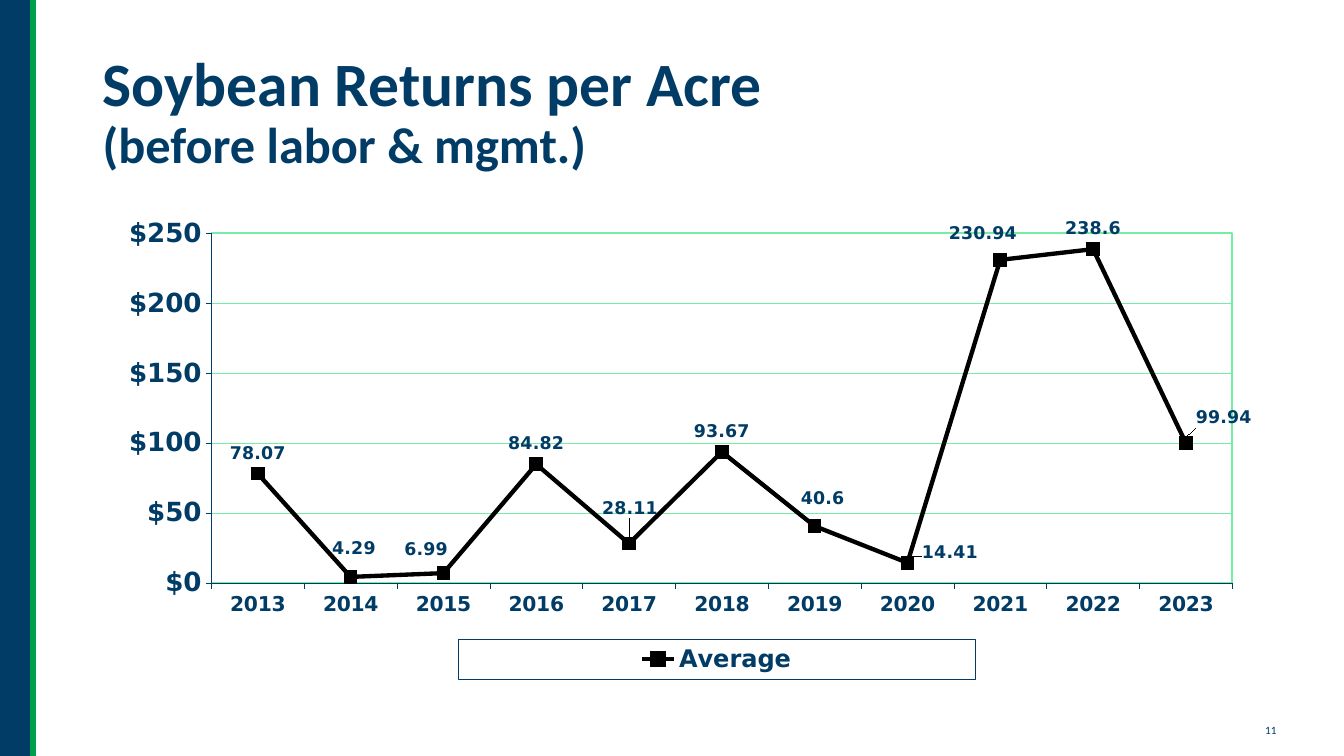
from lxml.etree import SubElement
from pptx import Presentation
from pptx.chart.data import CategoryChartData
from pptx.dml.color import RGBColor
from pptx.enum.chart import (XL_CHART_TYPE, XL_LABEL_POSITION, XL_LEGEND_POSITION,
                             XL_MARKER_STYLE, XL_TICK_MARK)
from pptx.enum.shapes import MSO_CONNECTOR, MSO_SHAPE
from pptx.enum.text import MSO_ANCHOR, PP_ALIGN
from pptx.oxml import parse_xml
from pptx.oxml.ns import nsdecls, qn
from pptx.util import Cm, Pt

COLORS = {"navy": "003C66", "green": "009F4D", "mint": "76EDA4", "black": "000000"}
TEXT_FONT = "Calibri"
CHART_FONT = "DejaVu Sans"
RETURNS = {
    "2013": 78.07, "2014": 4.29, "2015": 6.99, "2016": 84.82, "2017": 28.11, "2018": 93.67,
    "2019": 40.6, "2020": 14.41, "2021": 230.94, "2022": 238.6, "2023": 99.94,
}
LABEL_SHIFTS = {
    "2014": (0.003, -0.017), "2015": (-0.015, -0.006), "2017": (0.001, -0.031),
    "2019": (0.007, -0.015), "2020": (0.037, 0.021), "2021": (-0.015, -0.013),
    "2023": (0.033, -0.01),
}


def color(name):
    """Return the palette colour as an RGBColor."""
    return RGBColor.from_string(COLORS[name])


def style_font(font, size, face, bold=True):
    """Set size, face, weight and the navy text colour."""
    font.size = Pt(size)
    font.name = face
    font.bold = bold
    font.color.rgb = color("navy")


def style_line(line, name, width):
    """Give a line its colour and width."""
    line.color.rgb = color(name)
    line.width = Pt(width)


def place(predecessor, **values):
    """Insert a manual chart layout right after the given element."""
    parent = predecessor.getparent()
    for old in parent.findall(qn("c:layout")):
        parent.remove(old)
    layout = parse_xml(f"<c:layout {nsdecls('c')}><c:manualLayout/></c:layout>")
    for tag, value in values.items():
        SubElement(layout[0], qn(f"c:{tag}")).set("val", str(value))
    predecessor.addnext(layout)


def add_side_band(slide, left, top, width, height):
    """Draw the navy band with its green edge."""
    band = slide.shapes.add_shape(MSO_SHAPE.RECTANGLE, left, top, width, height)
    band.shadow.inherit = False
    band.fill.solid()
    band.fill.fore_color.rgb = color("navy")
    band.line.fill.background()
    edge = slide.shapes.add_connector(MSO_CONNECTOR.STRAIGHT, left + width, top,
                                      left + width, top + height)
    style_line(edge.line, "green", 4.5)
    SubElement(edge._element.spPr, qn("a:effectLst"))


def add_title(slide, left, top, width, height):
    """Write the heading and its smaller second line."""
    frame = slide.shapes.add_textbox(left, top, width, height).text_frame
    frame.word_wrap = True
    frame.vertical_anchor = MSO_ANCHOR.MIDDLE
    heading = frame.paragraphs[0]
    heading.line_spacing = 0.9
    subject = heading.add_run()
    subject.text = "Soybean Returns per Acre"
    style_font(subject.font, 44, TEXT_FONT)
    heading.add_line_break()
    qualifier = heading.add_run()
    qualifier.text = "(before labor & mgmt.)"
    style_font(qualifier.font, 36, TEXT_FONT)


def add_page_number(slide, left, top, width, height):
    """Write the page number."""
    frame = slide.shapes.add_textbox(left, top, width, height).text_frame
    frame.word_wrap = False
    frame.paragraphs[0].alignment = PP_ALIGN.CENTER
    number = frame.paragraphs[0].add_run()
    number.text = "11"
    style_font(number.font, 8, TEXT_FONT, bold=False)


def style_axes(chart):
    """Format the year and dollar axes and the gridlines."""
    years, dollars = chart.category_axis, chart.value_axis
    for axis, size in ((years, 14.6), (dollars, 18.8)):
        axis.major_tick_mark = XL_TICK_MARK.OUTSIDE
        axis.minor_tick_mark = XL_TICK_MARK.NONE
        style_font(axis.tick_labels.font, size, CHART_FONT)
        style_line(axis.format.line, "navy", 0.25)
    dollars.minimum_scale, dollars.maximum_scale = 0, 250
    dollars.major_unit = 50
    dollars.tick_labels.number_format = '"$"#,##0'
    dollars.tick_labels.number_format_is_linked = False
    style_line(dollars.major_gridlines.format.line, "mint", 0.25)


def style_average(average):
    """Format the average line, its markers and its value labels."""
    average.smooth = False
    style_line(average.format.line, "black", 3.13)
    marker = average.marker
    marker.style = XL_MARKER_STYLE.SQUARE
    marker.size = 9
    marker.format.fill.solid()
    marker.format.fill.fore_color.rgb = color("black")
    marker.format.line.color.rgb = color("black")
    labels = average.data_labels
    labels.show_value = True
    labels.position = XL_LABEL_POSITION.ABOVE
    style_font(labels.font, 12.5, CHART_FONT)
    years = list(RETURNS)
    for year, (right, down) in LABEL_SHIFTS.items():
        index = years.index(year)
        label = average.points[index].data_label
        style_font(label.font, 12.5, CHART_FONT)
        label.position = XL_LABEL_POSITION.ABOVE
        anchor = average._element.xpath(f"c:dLbls/c:dLbl/c:idx[@val='{index}']")[0]
        place(anchor, x=right, y=down)


def add_returns_chart(slide, left, top, width, height):
    """Plot the yearly returns with a boxed legend below."""
    returns = CategoryChartData()
    returns.categories = list(RETURNS)
    returns.add_series("Average", list(RETURNS.values()))
    chart = slide.shapes.add_chart(XL_CHART_TYPE.LINE_MARKERS, left, top, width, height,
                                   returns).chart
    chart.has_title = False
    style_font(chart.font, 18.8, CHART_FONT)
    chart.plots[0].vary_by_categories = False
    style_axes(chart)
    style_average(chart.plots[0].series[0])

    chart.has_legend = True
    legend = chart.legend
    legend.position = XL_LEGEND_POSITION.BOTTOM
    legend.include_in_layout = False
    style_font(legend.font, 17.3, CHART_FONT)
    place(legend._element.find(qn("c:legendPos")), xMode="edge", yMode="edge",
          x=0.317, y=0.912, w=0.45, h=0.083)
    legend._element.find(qn("c:txPr")).addprevious(outline("navy", 0.25))

    plot_area = chart._chartSpace.chart.plotArea
    for old in plot_area.findall(qn("c:layout")):
        plot_area.remove(old)
    first = plot_area[0]
    place(first, layoutTarget="inner", xMode="edge", yMode="edge",
          x=0.103, y=0.066, w=0.887, h=0.729)
    first.addprevious(plot_area.find(qn("c:layout")))
    plot_area.append(outline("mint", 1.25))


def outline(name, width):
    """Return unfilled chart shape properties with a coloured border."""
    return parse_xml(
        f"<c:spPr {nsdecls('c', 'a')}><a:noFill/><a:ln w='{Pt(width)}'><a:solidFill>"
        f"<a:srgbClr val='{COLORS[name]}'/></a:solidFill></a:ln></c:spPr>")


def main():
    """Build and save the soybean returns slide."""
    deck = Presentation()
    deck.slide_width, deck.slide_height = Cm(33.87), Cm(19.05)
    slide = deck.slides.add_slide(deck.slide_layouts[6])
    add_side_band(slide, 0, 0, Cm(0.84), deck.slide_height)
    add_title(slide, Cm(2.34), Cm(1.02), Cm(29.21), Cm(3.68))
    add_returns_chart(slide, Cm(2.34), Cm(5.08), Cm(29.21), Cm(12.09))
    add_page_number(slide, Cm(31.6), Cm(18.11), Cm(0.86), Cm(0.61))
    deck.save("out.pptx")


if __name__ == "__main__":
    main()
